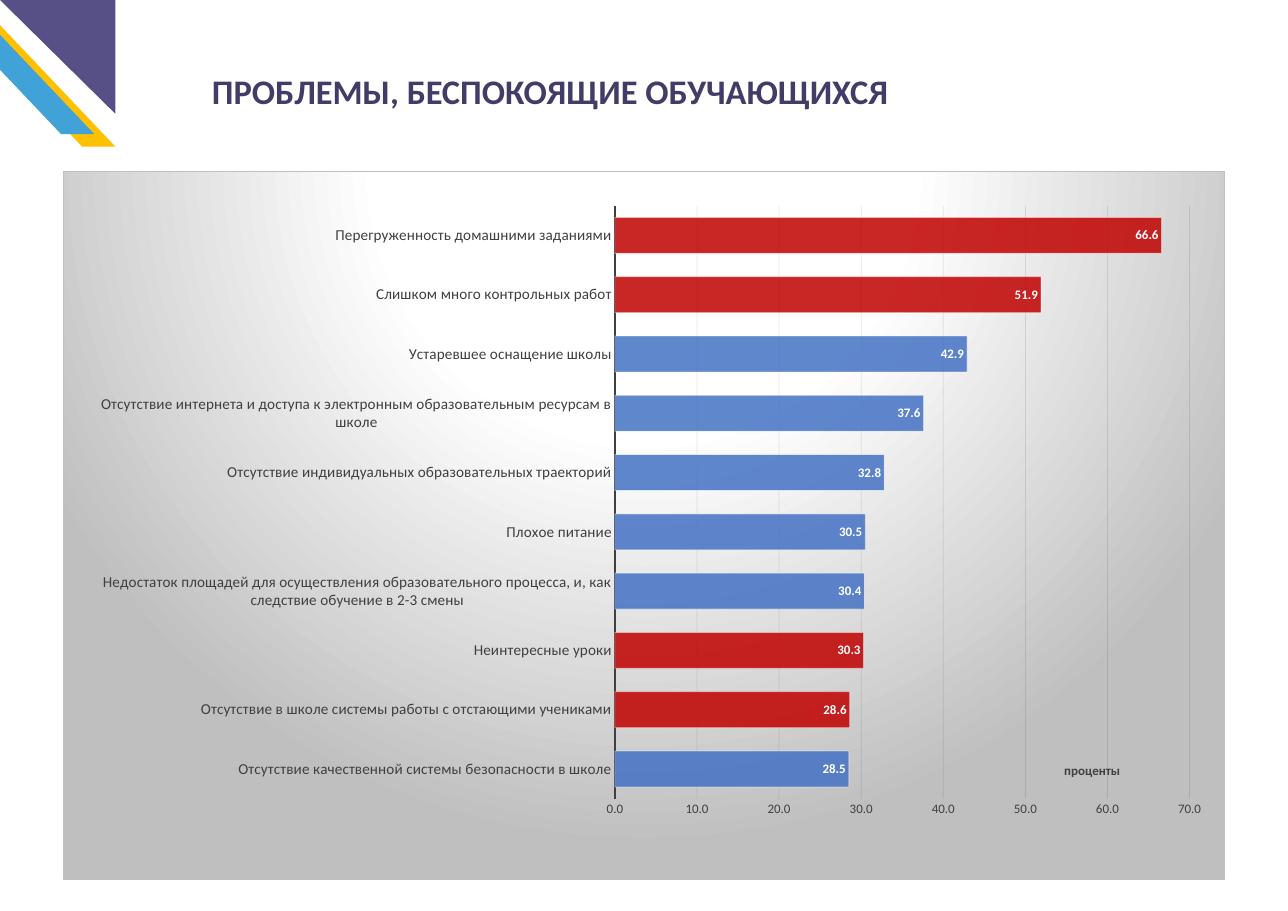
"""Build the slide on the problems that worry students."""
from dataclasses import dataclass

from lxml.etree import SubElement
from pptx import Presentation
from pptx.chart.data import CategoryChartData
from pptx.dml.color import RGBColor
from pptx.enum.chart import XL_CHART_TYPE, XL_LABEL_POSITION, XL_TICK_MARK
from pptx.enum.shapes import MSO_SHAPE
from pptx.enum.text import MSO_ANCHOR, MSO_AUTO_SIZE, PP_ALIGN
from pptx.oxml import parse_xml
from pptx.oxml.ns import nsdecls, qn
from pptx.util import Inches, Pt

BAR_CLUSTERED = XL_CHART_TYPE.BAR_CLUSTERED
INSIDE_END = XL_LABEL_POSITION.INSIDE_END
NO_TICK = XL_TICK_MARK.NONE
PARALLELOGRAM = MSO_SHAPE.PARALLELOGRAM
RIGHT_TRIANGLE = MSO_SHAPE.RIGHT_TRIANGLE
MIDDLE = MSO_ANCHOR.MIDDLE
LEFT = PP_ALIGN.LEFT
NO_AUTO_SIZE = MSO_AUTO_SIZE.NONE

FONT = "Calibri"
COLORS = {
    "yellow": "FFC000", "sky": "41A2D8", "violet": "565087", "title": "423D67",
    "bar": "4472C4", "accent": "C00000", "text": "404040", "grid": "0D0D0D",
    "white": "FFFFFF", "grey": "BFBFBF",
}


@dataclass
class Ornament:
    """A corner ornament, with lengths in inches."""
    kind: int
    left: float
    top: float
    width: float
    height: float
    color: str
    flips: tuple[str, ...]
    slant: float | None = None


@dataclass
class Problem:
    """A problem named by students, with its share in percent."""
    name: str
    share: float
    color: str = "bar"


ORNAMENTS = [
    Ornament(PARALLELOGRAM, -0.79, -0.06, 2.27, 1.94, "yellow", ("flipH",), 0.95),
    Ornament(PARALLELOGRAM, -1.06, -0.22, 2.27, 1.94, "sky", ("flipH",), 0.95),
    Ornament(RIGHT_TRIANGLE, 0, 0, 1.48, 1.46, "violet", ("flipH", "flipV")),
]
PROBLEMS = [
    Problem("Отсутствие качественной системы безопасности в школе", 28.5),
    Problem("Отсутствие в школе системы работы с отстающими учениками", 28.6, "accent"),
    Problem("Неинтересные уроки", 30.3, "accent"),
    Problem("Недостаток площадей для осуществления образовательного процесса, "
            "и, как следствие обучение в 2-3 смены", 30.4),
    Problem("Плохое питание", 30.5),
    Problem("Отсутствие индивидуальных образовательных траекторий", 32.8),
    Problem("Отсутствие интернета и доступа к электронным образовательным "
            "ресурсам в школе", 37.6),
    Problem("Устаревшее оснащение школы", 42.9),
    Problem("Слишком много контрольных работ", 51.9, "accent"),
    Problem("Перегруженность домашними заданиями", 66.6, "accent"),
]


def rgb(color: str) -> RGBColor:
    """Return the named colour."""
    return RGBColor.from_string(COLORS[color])


def style_font(font, *, size: float, color: str, bold: bool = False) -> None:
    """Format a font."""
    font.name, font.size, font.bold = FONT, Pt(size), bold
    font.color.rgb = rgb(color)


def write_text(frame, text: str, *, size: float, color: str, bold: bool = False) -> None:
    """Put formatted text in a text frame."""
    span = frame.paragraphs[0].add_run()
    span.text = text
    style_font(span.font, size=size, color=color, bold=bold)


def draw_ornament(page, ornament: Ornament) -> None:
    """Draw one corner ornament."""
    shape = page.shapes.add_shape(
        ornament.kind, Inches(ornament.left), Inches(ornament.top),
        Inches(ornament.width), Inches(ornament.height))
    if ornament.slant is not None:
        shape.adjustments[0] = ornament.slant
    for flip in ornament.flips:
        shape.element.spPr.find(qn("a:xfrm")).set(flip, "1")
    shape.fill.solid()
    shape.fill.fore_color.rgb = rgb(ornament.color)
    shape.line.fill.background()
    shape.shadow.inherit = False


def set_title(page, text: str) -> None:
    """Place and fill the title."""
    box = page.shapes.title
    box.left, box.top = Inches(2.72), Inches(0.84)
    box.width, box.height = Inches(11.82), Inches(0.64)
    frame = box.text_frame
    frame.margin_left = 0
    frame.auto_size, frame.vertical_anchor = NO_AUTO_SIZE, MIDDLE
    frame.paragraphs[0].alignment = LEFT
    write_text(frame, text, size=31.8, color="title", bold=True)


def set_layout(parent, target: str | None = None, **fractions: float) -> None:
    """Place a chart part by fractions of the chart."""
    layout = parent.find(qn("c:layout"))
    if layout is None:
        layout = parse_xml(f"<c:layout {nsdecls('c')}/>")
        parent.insert(0, layout)
    manual = SubElement(layout, qn("c:manualLayout"))
    settings = {"layoutTarget": target} if target else {}
    settings |= {"xMode": "edge", "yMode": "edge"} | fractions
    for name, value in settings.items():
        SubElement(manual, qn(f"c:{name}")).set("val", str(value))


def set_alpha(element, path: str, percent: int) -> None:
    """Make the colours found at a path partly transparent."""
    for color in element.xpath(path):
        SubElement(color, qn("a:alpha")).set("val", str(percent * 1000))


def style_bar(bar_format, color: str) -> None:
    """Fill and outline a bar."""
    bar_format.fill.solid()
    bar_format.fill.fore_color.rgb = rgb(color)
    bar_format.line.color.rgb = rgb("white")
    bar_format.line.width = Pt(0.75)


def style_backdrop(chart) -> None:
    """Give the chart area its radial gradient and border."""
    stops = "".join(
        f'<a:gs pos="{place * 1000}"><a:srgbClr val="{COLORS[color]}"/></a:gs>'
        for place, color in ((0, "white"), (39, "white"), (100, "grey")))
    chart.element.find(qn("c:chart")).addnext(parse_xml(
        f'<c:spPr {nsdecls("c", "a")}><a:gradFill><a:gsLst>{stops}</a:gsLst>'
        '<a:path path="circle"><a:fillToRect l="50000" t="-80000" r="50000" '
        f'b="180000"/></a:path></a:gradFill><a:ln w="{Pt(0.75)}"><a:solidFill>'
        f'<a:srgbClr val="{COLORS["grey"]}"/></a:solidFill></a:ln></c:spPr>'))


def style_axes(chart) -> None:
    """Format both axes, the grid and the axis title."""
    names, shares = chart.category_axis, chart.value_axis
    for axis, size in ((names, 14), (shares, 12)):
        axis.major_tick_mark = axis.minor_tick_mark = NO_TICK
        style_font(axis.tick_labels.font, size=size, color="text")
    names.format.line.color.rgb = rgb("text")
    names.format.line.width = Pt(1.5)
    shares.format.line.fill.background()
    shares.minimum_scale, shares.maximum_scale, shares.major_unit = 0, 70, 10
    shares.tick_labels.number_format = "0.0"
    shares.tick_labels.number_format_is_linked = False
    grid = shares.major_gridlines.format.line
    grid.color.rgb, grid.width = rgb("grid"), Pt(0.75)
    write_text(shares.axis_title.text_frame, "проценты", size=12, color="text", bold=True)
    set_layout(shares.axis_title.element, x=0.86, y=0.83)


def add_problem_chart(page) -> None:
    """Add the bar chart of problems."""
    data = CategoryChartData(number_format="0.0")
    data.categories = [problem.name for problem in PROBLEMS]
    data.add_series("Series 1", [problem.share for problem in PROBLEMS])
    chart = page.shapes.add_chart(
        BAR_CLUSTERED, Inches(0.81), Inches(2.19), Inches(14.91), Inches(9.1), data).chart
    chart.has_legend = chart.has_title = False
    style_font(chart.font, size=10, color="text")
    style_backdrop(chart)
    style_axes(chart)
    plot = chart.plots[0]
    plot.gap_width, plot.vary_by_categories = 65, False
    series = plot.series[0]
    style_bar(series.format, "bar")
    for index, problem in enumerate(PROBLEMS):
        if problem.color != "bar":
            style_bar(series.points[index].format, problem.color)
    labels = series.data_labels
    labels.show_value, labels.position = True, INSIDE_END
    labels.number_format, labels.number_format_is_linked = "0.0", False
    style_font(labels.font, size=12, color="white", bold=True)
    set_alpha(chart.element, ".//c:ser//c:spPr/a:solidFill/a:srgbClr", 85)
    set_alpha(chart.element, ".//c:ser//a:ln/a:solidFill/a:srgbClr", 50)
    set_alpha(chart.element, ".//c:majorGridlines//a:srgbClr", 10)
    set_layout(chart.element.xpath(".//c:plotArea")[0], "inner",
               x=0.475, y=0.049, w=0.495, h=0.837)


def main() -> None:
    """Build and save the deck."""
    deck = Presentation()
    deck.slide_width, deck.slide_height = Inches(16.53), Inches(11.69)
    page = deck.slides.add_slide(deck.slide_layouts[5])
    for ornament in ORNAMENTS:
        draw_ornament(page, ornament)
    set_title(page, "ПРОБЛЕМЫ, БЕСПОКОЯЩИЕ ОБУЧАЮЩИХСЯ")
    add_problem_chart(page)
    deck.save("out.pptx")


if __name__ == "__main__":
    main()
